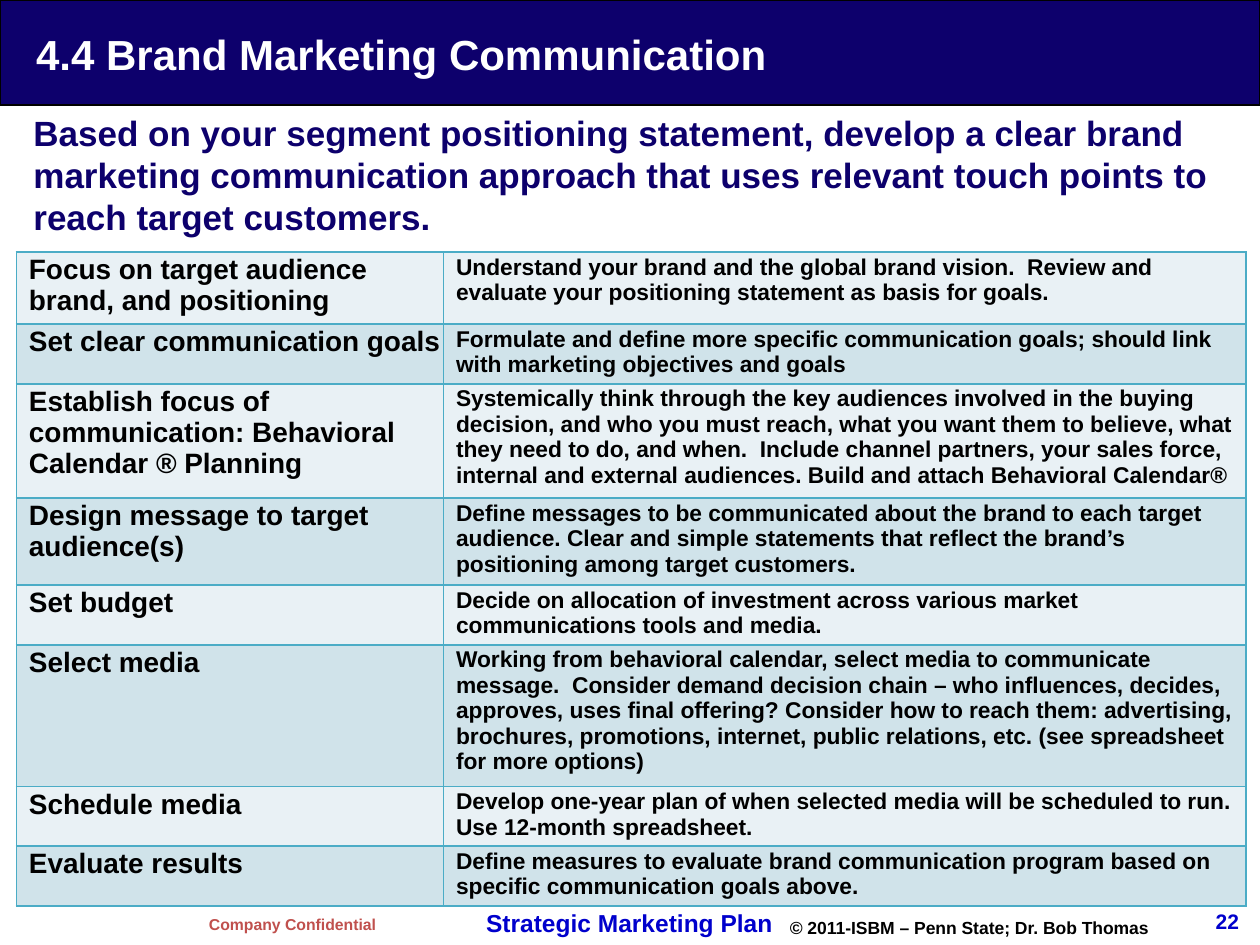
from lxml import etree
from pptx import Presentation, util as u
from pptx.dml.color import RGBColor
from pptx.enum import shapes, text
from pptx.oxml import ns

TITLE = "4.4 Brand Marketing Communication"
LEAD = ("Based on your segment positioning statement, develop a clear brand marketing "
        "communication approach that uses relevant touch points to reach target customers.")
STEPS = [
    ("Focus on target audience brand, and positioning",
     "Understand your brand and the global brand vision.  Review and evaluate your "
     "positioning statement as basis for goals.", 0.53),
    ("Set clear communication goals",
     "Formulate and define more specific communication goals; should link with "
     "marketing objectives and goals", 0.44),
    ("Establish focus of communication: Behavioral Calendar ® Planning",
     "Systemically think through the key audiences involved in the buying decision, and "
     "who you must reach, what you want them to believe, what they need to do, and when.  "
     "Include channel partners, your sales force, internal and external audiences. "
     "Build and attach Behavioral Calendar®", 0.84),
    ("Design message to target audience(s)",
     "Define messages to be communicated about the brand to each target audience. Clear and "
     "simple statements that reflect the brand’s positioning among target customers.", 0.64),
    ("Set budget",
     "Decide on allocation of investment across various market communications tools "
     "and media.", 0.44),
    ("Select media",
     "Working from behavioral calendar, select media to communicate message.  Consider demand "
     "decision chain – who influences, decides, approves, uses final offering? Consider how to "
     "reach them: advertising, brochures, promotions, internet, public relations, etc. "
     "(see spreadsheet for more options)", 1.05),
    ("Schedule media",
     "Develop one-year plan of when selected media will be scheduled to run.  "
     "Use 12-month spreadsheet.", 0.44),
    ("Evaluate results",
     "Define measures to evaluate brand communication program based on specific "
     "communication goals above.", 0.44),
]
THEME = dict(
    font="Arial", navy="0D006C", blue="0000CC", red="C0504D", black="000000", white="FFFFFF",
    grid="4BACC6", bands=("E9F1F5", "D0E3EA"),
    title=24, lead=20, step=16, detail=13, plan=14, number=12, rights=10, notice=9,
)
W, H = 10, 7.5
BAR = H / 9
EDGE = W / 60
TABLE_LEFT, TABLE_TOP = 0.13, 2
COLS = (3.39, 6.37)
PAD = (0.1, 0.05, 0.1, 0.05)
CELL_PAD = (0.1, 0.02, 0, 0.02)


def rgb(name):
    return RGBColor.from_string(THEME.get(name, name))


def write(tf, words, size, color="black", align=None):
    p = tf.paragraphs[0]
    p.alignment = align
    r = p.add_run()
    r.text = words
    r.font.name, r.font.size, r.font.bold = THEME["font"], u.Pt(THEME[size]), True
    r.font.color.rgb = rgb(color)


def add_text(s, words, at, size, color="black", pad=PAD, wrap=True,
             anchor=text.MSO_ANCHOR.TOP, align=None):
    tf = s.shapes.add_textbox(*map(u.Inches, at)).text_frame
    tf.word_wrap, tf.vertical_anchor = wrap, anchor
    tf.margin_left, tf.margin_top, tf.margin_right, tf.margin_bottom = map(u.Inches, pad)
    write(tf, words, size, color, align)


def add_borders(cell):
    tc_pr = cell._tc.get_or_add_tcPr()
    for i, side in enumerate("LRTB"):
        ln = etree.Element(ns.qn(f"a:ln{side}"), w=str(u.Pt(1)))
        fill = etree.SubElement(ln, ns.qn("a:solidFill"))
        etree.SubElement(fill, ns.qn("a:srgbClr"), val=THEME["grid"])
        tc_pr.insert(i, ln)


def add_steps(s):
    heights = [row[2] for row in STEPS]
    box = map(u.Inches, (TABLE_LEFT, TABLE_TOP, sum(COLS), sum(heights)))
    table = s.shapes.add_table(len(STEPS), len(COLS), *box).table
    for col, width in zip(table.columns, COLS):
        col.width = u.Inches(width)
    for i, (step, detail, height) in enumerate(STEPS):
        table.rows[i].height = u.Inches(height)
        for j, (words, size) in enumerate(((step, "step"), (detail, "detail"))):
            cell = table.cell(i, j)
            cell.margin_left, cell.margin_top, cell.margin_right, cell.margin_bottom = map(
                u.Inches, CELL_PAD)
            cell.fill.solid()
            cell.fill.fore_color.rgb = rgb(THEME["bands"][i % 2])
            add_borders(cell)
            write(cell.text_frame, words, size)


def main():
    prs = Presentation()
    prs.slide_width, prs.slide_height = u.Inches(W), u.Inches(H)
    s = prs.slides.add_slide(prs.slide_layouts[6])

    add_text(s, "Company Confidential", (1.56, 7.21, 1.53, 0.25), "notice", "red", wrap=False)
    add_text(s, "Strategic Marketing Plan", (3.76, 7.16, 2.49, 0.34), "plan", "blue", wrap=False)
    add_text(s, "© 2011-ISBM – Penn State; Dr. Bob Thomas", (6.17, 7.23, 3.42, 0.27), "rights")

    bar = s.shapes.add_shape(shapes.MSO_SHAPE.RECTANGLE, 0, 0, u.Inches(W), u.Inches(BAR))
    bar.shadow.inherit = False
    bar.fill.solid()
    bar.fill.fore_color.rgb = rgb("navy")
    bar.line.color.rgb, bar.line.width = rgb("black"), u.Pt(0.75)

    add_text(s, "22", (W * 0.9, 7.08, W / 12, 0.33), "number", "blue", pad=(0, 0, 0, 0),
             anchor=text.MSO_ANCHOR.BOTTOM, align=text.PP_ALIGN.RIGHT)
    add_text(s, TITLE, (EDGE, 0.03, W - 2 * EDGE, 0.8), "title", "white",
             pad=(0.12, 0, 0, 0), anchor=text.MSO_ANCHOR.MIDDLE)
    add_text(s, LEAD, (EDGE, BAR, W - 2 * EDGE, 1.33), "lead", "navy")
    add_steps(s)
    prs.save("out.pptx")


if __name__ == "__main__":
    main()
